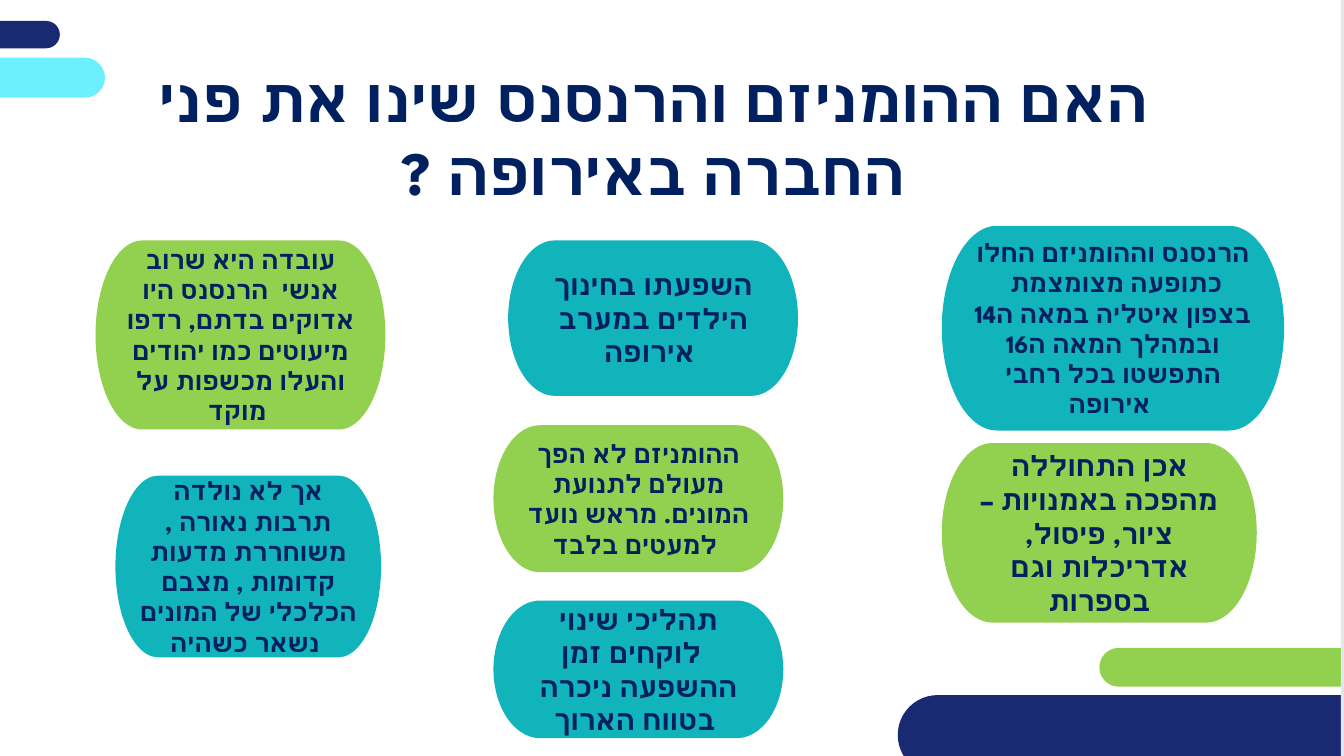
from dataclasses import dataclass

from lxml import etree
from pptx import Presentation
from pptx import util as u
from pptx.dml.color import RGBColor
from pptx.enum import shapes, text
from pptx.oxml.ns import qn

SCALE = 9525


@dataclass(frozen=True)
class Theme:
    font: str = "League Spartan"
    ink: str = "002060"
    navy: str = "192A72"
    green: str = "92D050"
    teal: str = "12B4BC"
    cyan: str = "6CF0FF"
    grey: str = "E6E6E6"
    title: int = 44
    large: int = 20
    small: int = 18


T = Theme()
KIND = shapes.MSO_SHAPE


def px(*sizes):
    return [u.Emu(n * SCALE) for n in sizes]


def style(para, size):
    para.alignment = text.PP_ALIGN.CENTER
    font = para.font
    font.size = u.Pt(size)
    font.bold = True
    font.color.rgb = RGBColor.from_string(T.ink)
    font.name = T.font
    props = para._p.get_or_add_pPr().find(qn("a:defRPr"))
    etree.SubElement(props, qn("a:cs"), typeface=T.font)


def block(slide, kind, box, color):
    shape = slide.shapes.add_shape(kind, *px(*box))
    shape.shadow.inherit = False
    shape.fill.solid()
    shape.fill.fore_color.rgb = RGBColor.from_string(color)
    shape.line.fill.background()
    return shape


def bar(slide, box, color):
    block(slide, KIND.ROUNDED_RECTANGLE, box, color).adjustments[0] = 0.5


def head(slide, box, words):
    title = slide.shapes.title
    title.left, title.top, title.width, title.height = px(*box)
    frame = title.text_frame
    frame.text = words
    frame.word_wrap = True
    frame.auto_size = text.MSO_AUTO_SIZE.NONE
    frame.vertical_anchor = text.MSO_ANCHOR.MIDDLE
    para = frame.paragraphs[0]
    style(para, T.title)
    para._p.get_or_add_pPr().set("rtl", "1")


def pill(slide, box, color, size, words):
    frame = block(slide, KIND.FLOWCHART_TERMINATOR, box, color).text_frame
    frame.word_wrap = True
    frame.vertical_anchor = text.MSO_ANCHOR.MIDDLE
    frame.text = words
    for para in frame.paragraphs:
        style(para, size)


def main():
    deck = Presentation()
    deck.slide_width, deck.slide_height = px(1280, 720)
    slide = deck.slides.add_slide(deck.slide_layouts[5])

    bars = [
        ((-255, 20, 312, 26), T.navy),
        ((1047, 617, 500, 37), T.green),
        ((-212, 55, 312, 38), T.cyan),
        ((855, 662, 543, 76), T.navy),
    ]
    for box, color in bars:
        bar(slide, box, color)
    block(slide, KIND.RECTANGLE, (1277, 0, 3, 720), T.grey)

    head(slide, (108, 90, 1029, 76),
         "האם ההומניזם והרנסנס שינו את פני החברה באירופה ?")

    pills = [
        ((470, 405, 276, 140), T.green, T.small,
         "ההומניזם לא הפך מעולם לתנועת המונים. מראש נועד למעטים בלבד "),
        ((897, 215, 326, 195), T.teal, T.small,
         "הרנסנס וההומניזם החלו כתופעה מצומצמת  בצפון איטליה במאה ה14 "
         "ובמהלך המאה ה16 התפשטו בכל רחבי אירופה "),
        ((484, 229, 276, 148), T.teal, T.large,
         "השפעתו בחינוך הילדים במערב אירופה "),
        ((897, 422, 300, 171), T.green, T.large,
         "אכן התחוללה מהפכה באמנויות – ציור, פיסול, אדריכלות וגם בספרות"),
        ((110, 453, 253, 173), T.teal, T.small,
         "אך לא נולדה תרבות נאורה , משוחררת מדעות קדומות , "
         "מצבם הכלכלי של המונים נשאר כשהיה "),
        ((91, 229, 276, 180), T.green, T.small,
         "עובדה היא שרוב אנשי  הרנסנס היו אדוקים בדתם, "
         "רדפו מיעוטים כמו יהודים והעלו מכשפות על מוקד "),
        ((470, 572, 276, 131), T.teal, T.large,
         "תהליכי שינוי לוקחים זמן  \nההשפעה ניכרה בטווח הארוך "),
    ]
    for box, color, size, words in pills:
        pill(slide, box, color, size, words)

    deck.save("out.pptx")


if __name__ == "__main__":
    main()
